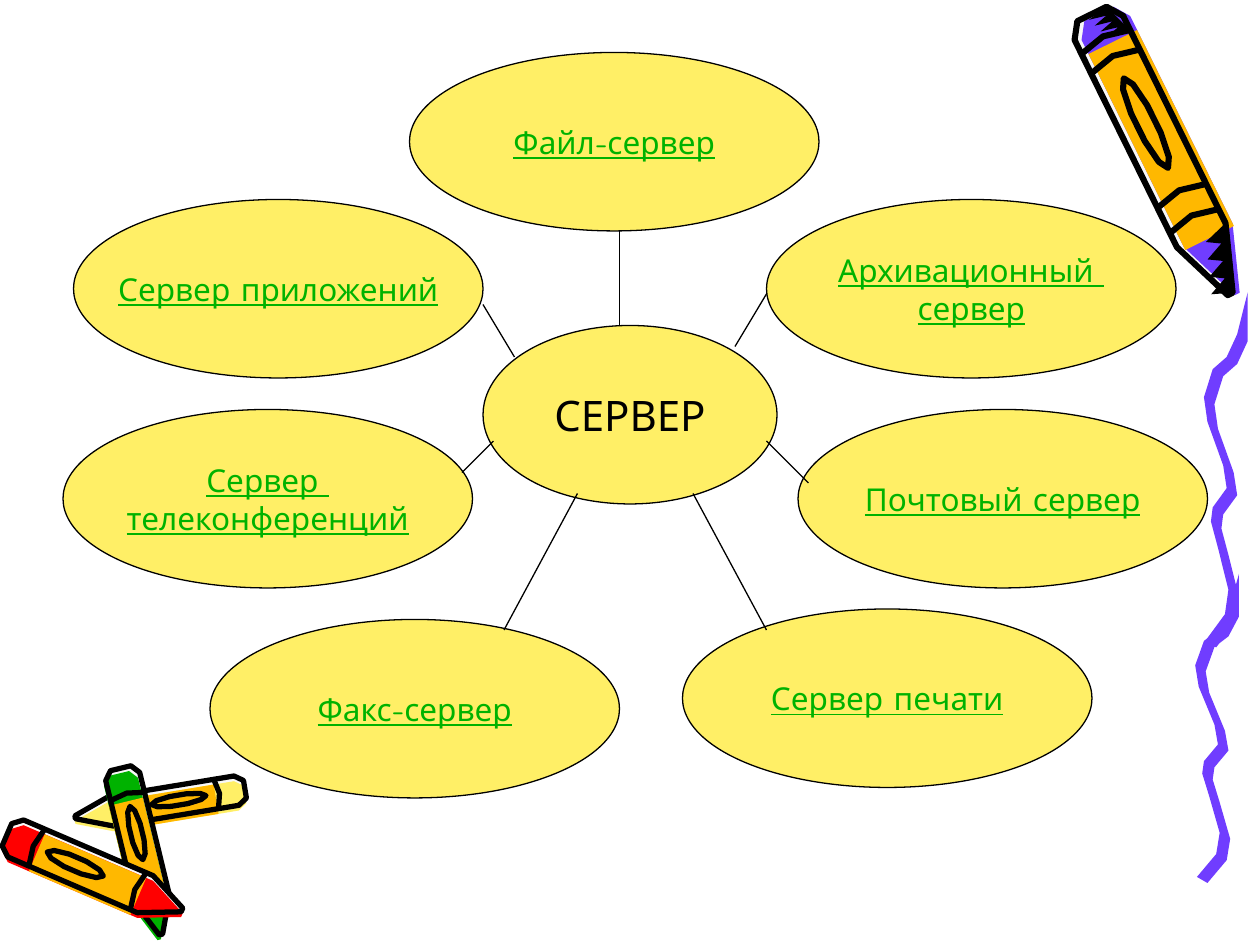
"""Build a slide of server kinds around a central ellipse, with crayons and a squiggle."""
from math import cos, hypot, pi, sin
from typing import NamedTuple, Optional

from lxml import etree
from pptx import Presentation
from pptx.dml.color import RGBColor
from pptx.enum.shapes import MSO_CONNECTOR, MSO_SHAPE
from pptx.enum.text import MSO_ANCHOR, PP_ALIGN
from pptx.oxml.ns import qn
from pptx.util import Pt

ELLIPSE = MSO_SHAPE.OVAL
STRAIGHT = MSO_CONNECTOR.STRAIGHT
MIDDLE = MSO_ANCHOR.MIDDLE
CENTER = PP_ALIGN.CENTER

BLACK = RGBColor(0x00, 0x00, 0x00)
PAPER = RGBColor(0xF8, 0xF8, 0xF8)
YELLOW = RGBColor(0xFF, 0xEF, 0x66)
ORANGE = RGBColor(0xFF, 0xB8, 0x00)
GREEN = RGBColor(0x00, 0xB2, 0x00)
RED = RGBColor(0xFF, 0x00, 0x00)
VIOLET = RGBColor(0x70, 0x3D, 0xFF)

FONT = "Comic Neue"
NODE_W, HUB_W, NODE_H = 234, 168, 102


class Point(NamedTuple):
    x: float
    y: float


class Node(NamedTuple):
    text: str
    x: float
    y: float


class Line(NamedTuple):
    x1: float
    y1: float
    x2: float
    y2: float


class Crayon(NamedTuple):
    """A crayon from tail to tip; wrapper and bands are fractions of its length."""
    tail: Point
    tip: Point
    width: float
    color: RGBColor
    color_shift: Point
    wrapper: tuple = (0.17, 0.75)
    bands: tuple = (0.17, 0.75)
    ink: float = 3
    jagged: bool = False

    def place(self, along: float, across: float, shift: Point = Point(0, 0)) -> Point:
        """Turn a length fraction and a half-width fraction into a slide point."""
        dx, dy = self.tip.x - self.tail.x, self.tip.y - self.tail.y
        side = across * self.width / 2 / hypot(dx, dy)
        return Point(self.tail.x + along * dx - side * dy + shift.x,
                     self.tail.y + along * dy + side * dx + shift.y)


class Squiggle(NamedTuple):
    x: float
    y: float
    stretch: float


NODES = [
    Node("Файл-сервер", 234, 30),
    Node("Сервер \nтелеконференций", 36, 234),
    Node("Сервер печати", 390, 348),
    Node("Почтовый сервер", 456, 234),
    Node("Факс-сервер", 120, 354),
    Node("Сервер приложений", 42, 114),
    Node("Архивационный \nсервер", 438, 114),
]
HUB = Node("СЕРВЕР", 276, 186)

SPOKES = [
    Line(330, 282, 288, 360),
    Line(396, 282, 438, 360),
    Line(420, 198, 438, 168),
    Line(294, 204, 276, 174),
    Line(354, 186, 354, 132),
    Line(282, 252, 264, 270),
    Line(438, 252, 462, 276),
]

CRAYONS = [
    Crayon(Point(140, 451), Point(43, 467), 17, YELLOW, Point(0, 3)),
    Crayon(Point(69, 439), Point(92, 534), 20, GREEN, Point(-1, 3)),
    Crayon(Point(4, 477), Point(104, 520), 23, RED, Point(0, 3)),
    Crayon(Point(624, 8), Point(703, 168), 31, VIOLET, Point(4, 0), wrapper=(0.1, 0.8),
           bands=(0.1, 0.17, 0.65, 0.74), ink=3.5, jagged=True),
]
SILHOUETTE = [(0, 0.6), (0.05, 1), (0.79, 1), (1, 0.1), (1, -0.1), (0.79, -1), (0.05, -1), (0, -0.6)]
BAND_BULGE = 0.02
EMBLEM_MIDDLE, EMBLEM_REACH, EMBLEM_SPREAD, EMBLEM_CORNERS = 0.39, 0.16, 0.35, 10
TEETH = 4

SQUIGGLES = [Squiggle(683, 328, 0.87), Squiggle(688, 167, 1)]
SPINE = [(22, 26), (16, 39), (8, 46), (3, 62), (5, 76), (14, 101), (16, 114),
         (8, 125), (7, 133), (11, 148), (17, 172), (15, 186), (4, 201)]
SPINE_TOP = (25, 0)
NIB = Point(3, 2)


def add_outline(shapes, points: list, fill: Optional[RGBColor] = None, ink: float = 0,
                close: bool = True) -> None:
    start, *rest = [(Pt(x), Pt(y)) for x, y in points]
    builder = shapes.build_freeform(*start, scale=1.0)
    builder.add_line_segments(rest, close=close)
    sp = builder.convert_to_shape()
    sp.shadow.inherit = False
    if fill is None:
        sp.fill.background()
    else:
        sp.fill.solid()
        sp.fill.fore_color.rgb = fill
    if ink:
        sp.line.color.rgb = BLACK
        sp.line.width = Pt(ink)
    else:
        sp.line.fill.background()


def add_jags(shapes, crayon: Crayon, start: tuple, end: tuple) -> None:
    """Fill a black sawtooth beside the edge that runs from start to end."""
    points = [start, end]
    for i in range(2 * TEETH - 1):
        t = (i + 1) / (2 * TEETH)
        along = end[0] + t * (start[0] - end[0])
        edge = end[1] + t * (start[1] - end[1])
        points.append((along, edge + (0.25 if i % 2 else 0.85)))
    add_outline(shapes, [crayon.place(*pt) for pt in points], fill=BLACK)


def add_crayon(shapes, crayon: Crayon) -> None:
    body = [crayon.place(*pt) for pt in SILHOUETTE]
    tinted = [crayon.place(*pt, crayon.color_shift) for pt in SILHOUETTE]
    first, last = crayon.wrapper
    corners = [(first, -1), (last, -1), (last, 1), (first, 1)]
    add_outline(shapes, body, fill=PAPER)
    add_outline(shapes, tinted, fill=crayon.color)
    add_outline(shapes, [crayon.place(*pt, crayon.color_shift) for pt in corners], fill=ORANGE)
    add_outline(shapes, body, ink=crayon.ink)
    for band in crayon.bands:
        chevron = [(band, -1), (band - BAND_BULGE, 0), (band, 1)]
        add_outline(shapes, [crayon.place(*pt) for pt in chevron], ink=crayon.ink, close=False)
    angles = [2 * pi * i / EMBLEM_CORNERS for i in range(EMBLEM_CORNERS)]
    emblem = [crayon.place(EMBLEM_MIDDLE + EMBLEM_REACH * cos(a), EMBLEM_SPREAD * sin(a))
              for a in angles]
    add_outline(shapes, emblem, ink=crayon.ink)
    if crayon.jagged:
        add_jags(shapes, crayon, (0.79, -1), (1, -0.1))
        add_jags(shapes, crayon, (0.1, -1), (0, -0.6))


def add_squiggle(shapes, squiggle: Squiggle) -> None:
    """Sweep a slanted nib down the spine, starting from a sharp top."""
    left = [(x - NIB.x, y - NIB.y) for x, y in SPINE]
    right = [(x + NIB.x, y + NIB.y) for x, y in SPINE]
    points = [SPINE_TOP, *left, *reversed(right)]
    add_outline(shapes, [(squiggle.x + x, squiggle.y + y * squiggle.stretch) for x, y in points],
                fill=VIOLET)


def add_line(shapes, line: Line) -> None:
    cxn = shapes.add_connector(STRAIGHT, *map(Pt, line))
    cxn.line.color.rgb = BLACK
    cxn.line.width = Pt(0.75)
    etree.SubElement(cxn._element.spPr, qn("a:effectLst"))


def write_text(tf, text: str, *, size: float, color: RGBColor, underline: bool) -> None:
    tf.word_wrap = False
    tf.vertical_anchor = MIDDLE
    for i, part in enumerate(text.split("\n")):
        p = tf.add_paragraph() if i else tf.paragraphs[0]
        p.alignment = CENTER
        r = p.add_run()
        r.text = part
        r.font.name, r.font.size, r.font.underline = FONT, Pt(size), underline
        r.font.color.rgb = color


def add_node(shapes, node: Node, width: float = NODE_W, **text_format) -> None:
    sp = shapes.add_shape(ELLIPSE, Pt(node.x), Pt(node.y), Pt(width), Pt(NODE_H))
    sp.shadow.inherit = False
    sp.fill.solid()
    sp.fill.fore_color.rgb = YELLOW
    sp.line.color.rgb = BLACK
    sp.line.width = Pt(0.75)
    write_text(sp.text_frame, node.text, **text_format)


def main() -> None:
    prs = Presentation()
    prs.slide_width, prs.slide_height = Pt(720), Pt(540)
    shapes = prs.slides.add_slide(prs.slide_layouts[6]).shapes
    for crayon in CRAYONS:
        add_crayon(shapes, crayon)
    for squiggle in SQUIGGLES:
        add_squiggle(shapes, squiggle)
    for node in NODES:
        add_node(shapes, node, size=18, color=GREEN, underline=True)
    add_node(shapes, HUB, width=HUB_W, size=24, color=BLACK, underline=False)
    for spoke in SPOKES:
        add_line(shapes, spoke)
    prs.save("out.pptx")


if __name__ == "__main__":
    main()
